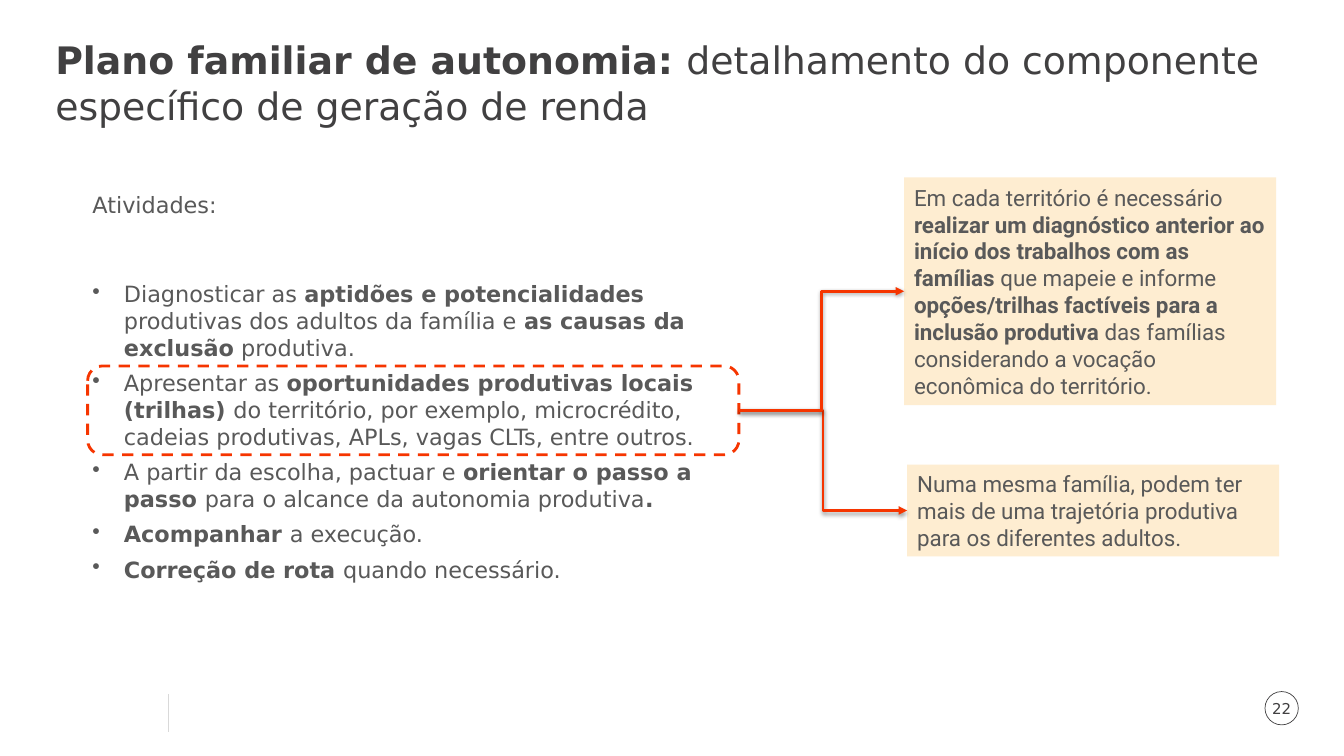
from lxml import etree
from pptx import Presentation
from pptx.dml.color import RGBColor
from pptx.enum.dml import MSO_LINE
from pptx.enum.shapes import MSO_CONNECTOR, MSO_SHAPE
from pptx.enum.text import MSO_ANCHOR, PP_ALIGN
from pptx.oxml import parse_xml
from pptx.oxml.ns import nsdecls, qn
from pptx.util import Pt

STRAIGHT, ELBOW = MSO_CONNECTOR.STRAIGHT, MSO_CONNECTOR.ELBOW
RECT, ROUNDED, OVAL = MSO_SHAPE.RECTANGLE, MSO_SHAPE.ROUNDED_RECTANGLE, MSO_SHAPE.OVAL
DASH = MSO_LINE.DASH
TOP, MIDDLE = MSO_ANCHOR.TOP, MSO_ANCHOR.MIDDLE
LEFT, CENTER = PP_ALIGN.LEFT, PP_ALIGN.CENTER
LEFT_SIDE, RIGHT_SIDE = 1, 3

COLORS = {"title": "414041", "body": "595959", "accent": "F63500",
          "note": "FEEDD1", "rule": "D9D9D9"}
SANS, NOTE_FONT = "DejaVu Sans", "Roboto"

# Asterisks enclose the bold parts
TITLE = "*Plano familiar de autonomia: *detalhamento do componente específico de geração de renda"
ACTIVITIES = [
    "Diagnosticar as *aptidões e potencialidades *produtivas dos adultos da família e "
    "*as causas da exclusão* produtiva.",
    "Apresentar as *oportunidades produtivas locais (trilhas) *do território, por exemplo, "
    "microcrédito, cadeias produtivas, APLs, vagas CLTs, entre outros.",
    "A partir da escolha, pactuar e *orientar o passo a passo *para o alcance da "
    "autonomia produtiva*.*",
    "*Acompanhar *a execução.",
    "*Correção de rota *quando necessário.",
]
DIAGNOSIS = ("Em cada território é necessário *realizar um diagnóstico anterior ao início dos "
             "trabalhos com as famílias *que mapeie e informe *opções/trilhas factíveis para a "
             "inclusão produtiva *das famílias considerando a vocação econômica do território.")
TRAJECTORIES = ("Numa mesma família, podem ter mais de uma trajetória produtiva "
                "para os diferentes adultos.")


def color(name):
    return RGBColor.from_string(COLORS[name])


def points(box):
    return [Pt(value) for value in box]


def write(paragraph, text, size, font, tint, align=LEFT):
    paragraph.alignment = align
    paragraph.font.size = Pt(size)
    paragraph.font.name = font
    paragraph.font.color.rgb = color(tint)
    for index, part in enumerate(text.split("*")):
        if part:
            run = paragraph.add_run()
            run.text = part
            if index % 2:
                run.font.bold = True


def add_bullet(paragraph, indent):
    props = paragraph._p.get_or_add_pPr()
    props.set("marL", str(Pt(indent)))
    props.set("indent", str(-Pt(indent)))
    bullet = parse_xml(f'<a:buChar {nsdecls("a")} char="•"/>')
    props.insert_element_before(bullet, "a:tabLst", "a:defRPr", "a:extLst")


def add_outline(slide, kind, box, tint, weight):
    shape = slide.shapes.add_shape(kind, *points(box))
    shape.shadow.inherit = False
    shape.fill.background()
    shape.line.color.rgb = color(tint)
    shape.line.width = Pt(weight)
    return shape


def add_line(slide, kind, ends, tint, weight):
    line = slide.shapes.add_connector(kind, *points(ends))
    line.line.color.rgb = color(tint)
    line.line.width = Pt(weight)
    effects = etree.SubElement(line._element.spPr, qn("a:effectLst"))
    return line, effects


def title(slide, box):
    heading = slide.shapes.add_textbox(*points(box)).text_frame
    heading.word_wrap = True
    heading.vertical_anchor = TOP
    write(heading.paragraphs[0], TITLE, 27, SANS, "title")


def activities(slide, box):
    """Lists the activities and returns the frame around the second one."""
    left, top, width, _ = box
    body = slide.shapes.add_textbox(*points(box)).text_frame
    body.word_wrap = True
    intro = body.paragraphs[0]
    write(intro, "Atividades:", 16, SANS, "body")
    intro.space_after = Pt(44.5)
    for activity in ACTIVITIES:
        item = body.add_paragraph()
        write(item, activity, 16, SANS, "body")
        item.space_after = Pt(6)
        add_bullet(item, 22.5)

    highlight = add_outline(slide, ROUNDED, (left + 3.6, top + 128.4, width - 15, 63.5),
                            "accent", 2)
    highlight.line.dash_style = DASH
    return highlight


def note(slide, box, text):
    card = slide.shapes.add_shape(RECT, *points(box))
    card.shadow.inherit = False
    card.fill.solid()
    card.fill.fore_color.rgb = color("note")
    card.line.fill.background()
    card.text_frame.word_wrap = True
    card.text_frame.vertical_anchor = MIDDLE
    write(card.text_frame.paragraphs[0], text, 16, NOTE_FONT, "body")
    return card


def arrow(slide, source, target):
    link, effects = add_line(slide, ELBOW, (0, 0, 0, 0), "accent", 2)
    link.begin_connect(source, RIGHT_SIDE)
    link.end_connect(target, LEFT_SIDE)
    etree.SubElement(link.line._get_or_add_ln(), qn("a:tailEnd"), type="triangle")
    effects.append(parse_xml(
        f'<a:outerShdw {nsdecls("a")} blurRad="{Pt(3.1)}" dist="{Pt(1.6)}" dir="5400000" '
        'rotWithShape="0"><a:srgbClr val="000000"><a:alpha val="38000"/></a:srgbClr>'
        '</a:outerShdw>'))


def footer(slide, box):
    left, top, width, height = box
    add_line(slide, STRAIGHT, (left, top + 2, left, top + height), "rule", 0.75)
    diameter = 23.8
    badge = add_outline(slide, OVAL, (left + width - diameter, top, diameter, diameter),
                        "title", 0.5)
    number = badge.text_frame
    number.margin_left = number.margin_right = number.margin_top = number.margin_bottom = 0
    number.word_wrap = False
    number.vertical_anchor = MIDDLE
    write(number.paragraphs[0], "22", 10.7, SANS, "title", CENTER)


def main():
    deck = Presentation()
    deck.slide_width, deck.slide_height = Pt(960), Pt(540)
    slide = deck.slides.add_slide(deck.slide_layouts[6])

    footer(slide, (120.3, 494, 807.1, 28.7))
    title(slide, (32.4, 23, 894.2, 60.5))
    highlight = activities(slide, (59, 133, 480.2, 290.4))
    diagnosis = note(slide, (645.8, 126.7, 265.7, 162.7), DIAGNOSIS)
    trajectories = note(slide, (648, 331.9, 265.7, 65.5), TRAJECTORIES)
    for card in (trajectories, diagnosis):
        arrow(slide, highlight, card)

    deck.save("out.pptx")


if __name__ == "__main__":
    main()
